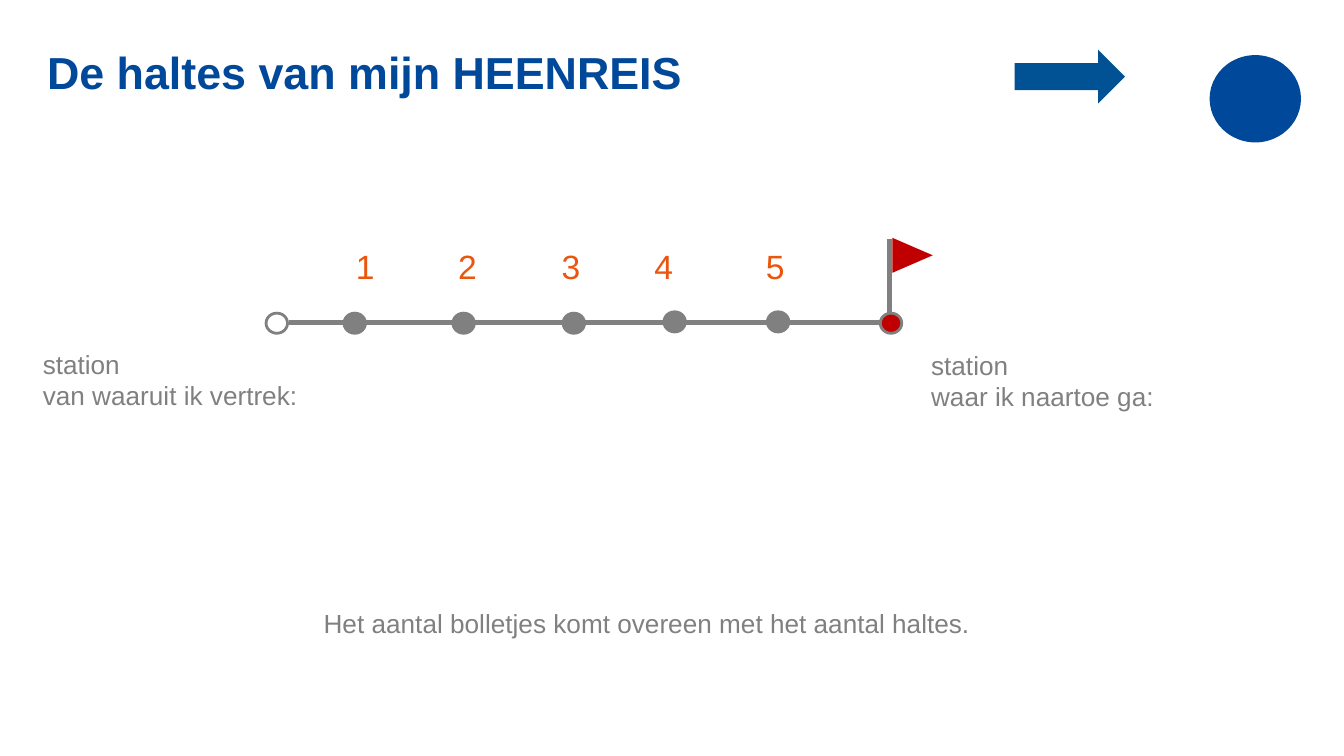
from typing import NamedTuple

from lxml.etree import SubElement
from pptx import Presentation
from pptx.dml.color import RGBColor
from pptx.enum.shapes import MSO_CONNECTOR as Link, MSO_SHAPE as Kind
from pptx.enum.text import MSO_ANCHOR as Anchor, PP_ALIGN as Align
from pptx.oxml.ns import qn
from pptx.util import Inches, Pt

GRAY, BLUE, RED, ORANGE, WHITE = "808080", "004899", "C00000", "EA560D", "FFFFFF"


class Box(NamedTuple):
    x: float
    y: float
    w: float
    h: float


class Stop(NamedTuple):
    x: float
    y: float
    fill: str = GRAY


class Note(NamedTuple):
    box: Box
    lines: list[str]
    size: int = 14
    color: str = GRAY


STOPS = [
    Stop(1.98, 2.33, WHITE), Stop(2.56, 2.33), Stop(3.37, 2.33),
    Stop(4.19, 2.33), Stop(4.94, 2.32), Stop(5.71, 2.32), Stop(6.55, 2.33, RED),
]
TABS = [0.76, 1.53, 2.22, 3.05]
NUMBERS = Note(Box(2.55, 1.78, 3.7, 0.4), ["1\t2\t3\t4\t5"], 18, ORANGE)
NOTES = [
    Note(Box(0.22, 2.54, 2.34, 0.57), ["station", "van waaruit ik vertrek:"]),
    Note(Box(6.83, 2.55, 2.34, 0.57), ["station", "waar ik naartoe ga:"]),
    Note(Box(2.31, 4.47, 5.97, 0.57),
         ["Het aantal bolletjes komt overeen met het aantal haltes."]),
]


def paint(color, value: str) -> None:
    color.rgb = RGBColor.from_string(value)


def style(para, size: int, color: str, bold: bool = False) -> None:
    font = para.font
    font.name, font.size, font.bold = "Arial", Pt(size), bold
    paint(font.color, color)


def add_form(slide, kind: Kind, box: Box, fill: str, line: str = ""):
    form = slide.shapes.add_shape(kind, *map(Inches, box))
    form.shadow.inherit = False
    form.fill.solid()
    paint(form.fill.fore_color, fill)
    if line:
        paint(form.line.color, line)
        form.line.width = Pt(1.5)
    else:
        form.line.fill.background()
    return form


def add_line(slide, x1: float, y1: float, x2: float, y2: float) -> None:
    ends = map(Inches, (x1, y1, x2, y2))
    line = slide.shapes.add_connector(Link.STRAIGHT, *ends)
    paint(line.line.color, GRAY)
    line.line.width = Pt(3)
    SubElement(line._element.spPr, qn("a:effectLst"))


def add_note(slide, note: Note, tabs: tuple[float, ...] | list[float] = ()) -> None:
    frame = slide.shapes.add_textbox(*map(Inches, note.box)).text_frame
    frame.word_wrap = True
    frame.text = "\n".join(note.lines)
    for para in frame.paragraphs:
        if tabs:
            row = SubElement(para._p.get_or_add_pPr(), qn("a:tabLst"))
            for tab in tabs:
                SubElement(row, qn("a:tab"), pos=str(Inches(tab)), algn="l")
        style(para, note.size, note.color)


def set_title(slide, text: str) -> None:
    title = slide.shapes.title
    title.left, title.top, title.width, title.height = map(
        Inches, (0.25, 0.28, 8.91, 0.78))
    frame = title.text_frame
    frame.text = text
    frame.vertical_anchor = Anchor.TOP
    para = frame.paragraphs[0]
    para.alignment = Align.LEFT
    style(para, 24, BLUE, bold=True)


def main() -> None:
    deck = Presentation()
    deck.slide_width = Inches(10)
    deck.slide_height = deck.slide_width * 9 // 16
    slide = deck.slides.add_slide(deck.slide_layouts.get_by_name("Title Only"))
    set_title(slide, "De haltes van mijn HEENREIS")

    flag = add_form(slide, Kind.ISOSCELES_TRIANGLE, Box(6.66, 1.75, 0.26, 0.3), RED)
    flag.rotation = 90
    add_line(slide, 6.62, 1.78, 6.62, 2.33)
    add_line(slide, 2.15, 2.4, 6.55, 2.4)
    for stop in STOPS:
        box = Box(stop.x, stop.y, 0.16, 0.15)
        add_form(slide, Kind.FLOWCHART_CONNECTOR, box, stop.fill, GRAY)

    add_form(slide, Kind.RIGHT_ARROW, Box(7.55, 0.37, 0.82, 0.4), "005294")
    add_form(slide, Kind.OVAL, Box(9, 0.41, 0.68, 0.65), BLUE)
    add_note(slide, NUMBERS, TABS)
    for note in NOTES:
        add_note(slide, note)
    deck.save("out.pptx")


if __name__ == "__main__":
    main()
